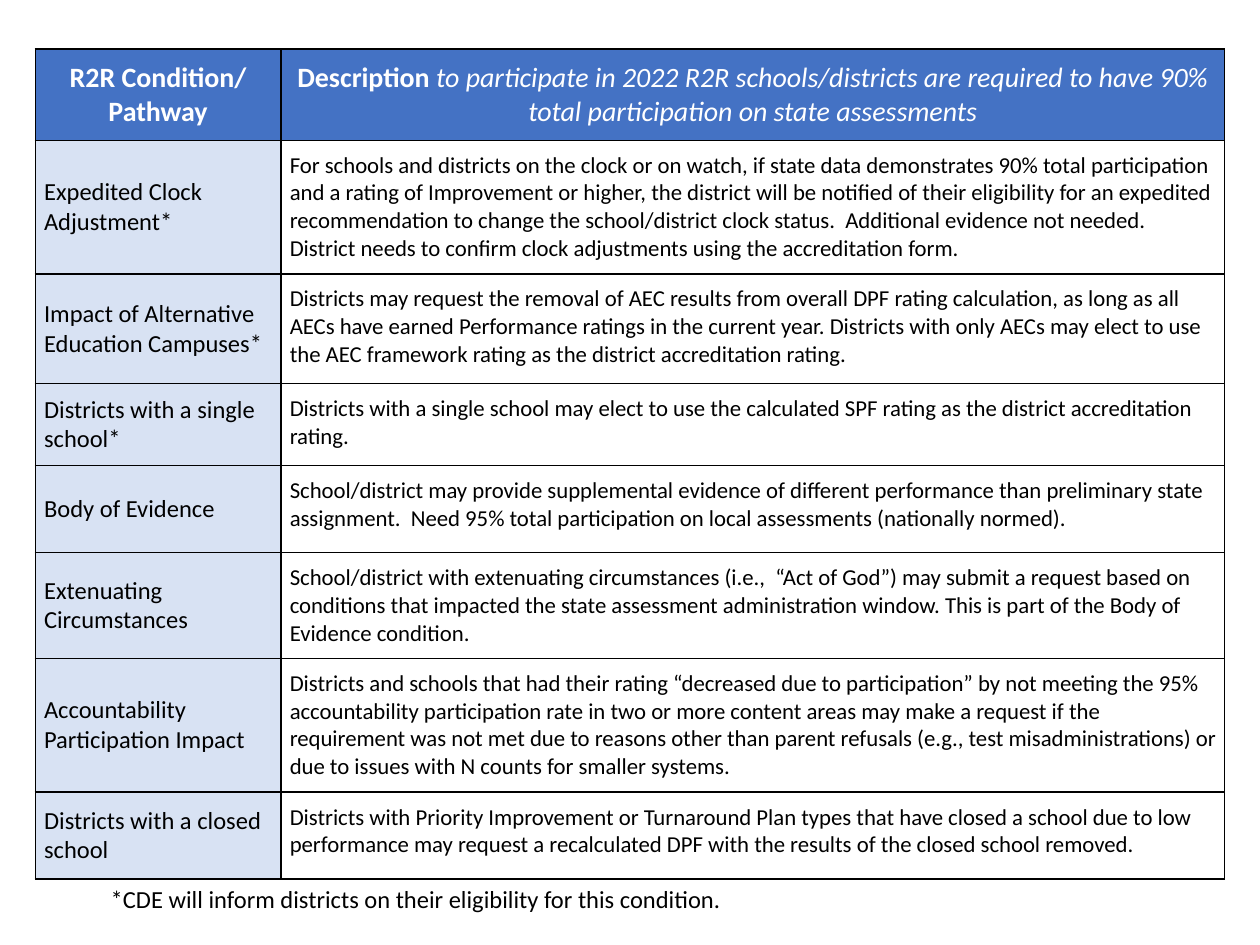
import pptx
import pptx.dml.color
import pptx.enum.text
import pptx.oxml
import pptx.oxml.ns
import pptx.util
from dataclasses import dataclass

Inches = pptx.util.Inches
Pt = pptx.util.Pt
Align = pptx.enum.text.PP_ALIGN
Anchor = pptx.enum.text.MSO_ANCHOR


@dataclass(frozen=True)
class Theme:
    font: str = "Calibri"
    blue: str = "4472C4"
    pale: str = "D8E2F3"
    white: str = "FFFFFF"
    black: str = "000000"
    head: int = 16
    name: int = 14
    body: int = 13
    line: int = 1


THEME = Theme()

HEADS = [
    [("R2R Condition/ Pathway", {"bold": True})],
    [("Description ", {"bold": True}),
     ("to participate in 2022 R2R schools/districts are required to have 90% "
      "total participation on state assessments", {"italic": True})],
]

# Row height, condition, description
ROWS = [
    (0.69, "Expedited Clock Adjustment*",
     "For schools and districts on the clock or on watch, if state data "
     "demonstrates 90% total participation and a rating of Improvement or "
     "higher, the district will be notified of their eligibility for an "
     "expedited recommendation to change the school/district clock status.  "
     "Additional evidence not needed.  District needs to confirm clock "
     "adjustments using the accreditation form."),
    (0.87, "Impact of Alternative Education Campuses*",
     "Districts may request the removal of AEC results from overall DPF "
     "rating calculation, as long as all AECs have earned Performance ratings "
     "in the current year. Districts with only AECs may elect to use the AEC "
     "framework rating as the district accreditation rating."),
    (0.51, "Districts with a single school*",
     "Districts with a single school may elect to use the calculated SPF "
     "rating as the district accreditation rating."),
    (0.69, "Body of Evidence",
     "School/district may provide supplemental evidence of different "
     "performance than preliminary state assignment.  Need 95% total "
     "participation on local assessments (nationally normed)."),
    (0.69, "Extenuating Circumstances",
     "School/district with extenuating circumstances (i.e.,  “Act of God”) "
     "may submit a request based on conditions that impacted the state "
     "assessment administration window. This is part of the Body of Evidence "
     "condition."),
    (0.87, "Accountability Participation Impact",
     "Districts and schools that had their rating “decreased due to "
     "participation” by not meeting the 95% accountability participation rate "
     "in two or more content areas may make a request if the requirement was "
     "not met due to reasons other than parent refusals (e.g., test "
     "misadministrations) or due to issues with N counts for smaller systems."),
    (0.69, "Districts with a closed school",
     "Districts with Priority Improvement or Turnaround Plan types that have "
     "closed a school due to low performance may request a recalculated DPF "
     "with the results of the closed school removed."),
]


def put_text(para, text, size, color=THEME.black, bold=False, italic=False):
    run = para.add_run()
    run.text = text
    font = run.font
    font.name, font.size = THEME.font, Pt(size)
    font.bold, font.italic = bold, italic
    font.color.rgb = pptx.dml.color.RGBColor.from_string(color)


def set_cell(cell, fill, anchor=Anchor.TOP):
    """Give a cell its borders, fill and margins; return its paragraph."""
    props = cell._tc.get_or_add_tcPr()
    for side in "LRTB":
        props.append(pptx.oxml.parse_xml(
            f'<a:ln{side} {pptx.oxml.ns.nsdecls("a")} w="{Pt(THEME.line)}">'
            f'<a:solidFill><a:srgbClr val="{THEME.black}"/></a:solidFill>'
            f'</a:ln{side}>'))
    cell.fill.solid()
    cell.fill.fore_color.rgb = pptx.dml.color.RGBColor.from_string(fill)
    cell.margin_left = cell.margin_right = Inches(0.07)
    cell.margin_top = cell.margin_bottom = Inches(0.09)
    cell.vertical_anchor = anchor
    return cell.text_frame.paragraphs[0]


def add_grid(slide, left, top, width, first):
    highs = [0.6] + [row[0] for row in ROWS]
    grid = slide.shapes.add_table(
        len(highs), 2, Inches(left), Inches(top),
        Inches(width), Inches(sum(highs))).table
    grid.horz_banding = False
    for col, wide in zip(grid.columns, (first, width - first)):
        col.width = Inches(wide)
    for row, high in zip(grid.rows, highs):
        row.height = Inches(high)

    # Header row
    for col, runs in enumerate(HEADS):
        para = set_cell(grid.cell(0, col), THEME.blue)
        para.alignment = Align.CENTER
        for text, style in runs:
            put_text(para, text, THEME.head, THEME.white, **style)

    # Conditions
    for row, (_, name, body) in enumerate(ROWS, 1):
        para = set_cell(grid.cell(row, 0), THEME.pale, Anchor.MIDDLE)
        put_text(para, name, THEME.name)
        para = set_cell(grid.cell(row, 1), THEME.white)
        put_text(para, body, THEME.body)


def add_note(slide, left, top, width, height):
    box = slide.shapes.add_textbox(
        Inches(left), Inches(top), Inches(width), Inches(height))
    frame = box.text_frame
    frame.word_wrap = True
    frame.auto_size = pptx.enum.text.MSO_AUTO_SIZE.SHAPE_TO_FIT_TEXT
    frame.margin_left = frame.margin_right = Inches(0.1)
    frame.margin_top = frame.margin_bottom = Inches(0.1)
    para = frame.paragraphs[0]
    para._p.get_or_add_pPr().set("marL", str(Inches(0.5)))
    put_text(para, "*CDE will inform districts on their eligibility for this "
             "condition.", THEME.name)


def main():
    deck = pptx.Presentation()
    deck.slide_width, deck.slide_height = Inches(10), Inches(7.5)
    slide = deck.slides.add_slide(deck.slide_layouts[6])
    add_grid(slide, 0.28, 0.39, 9.44, first=1.95)
    add_note(slide, 0.28, 6.92, 9.27, 0.44)
    deck.save("out.pptx")


if __name__ == "__main__":
    main()
